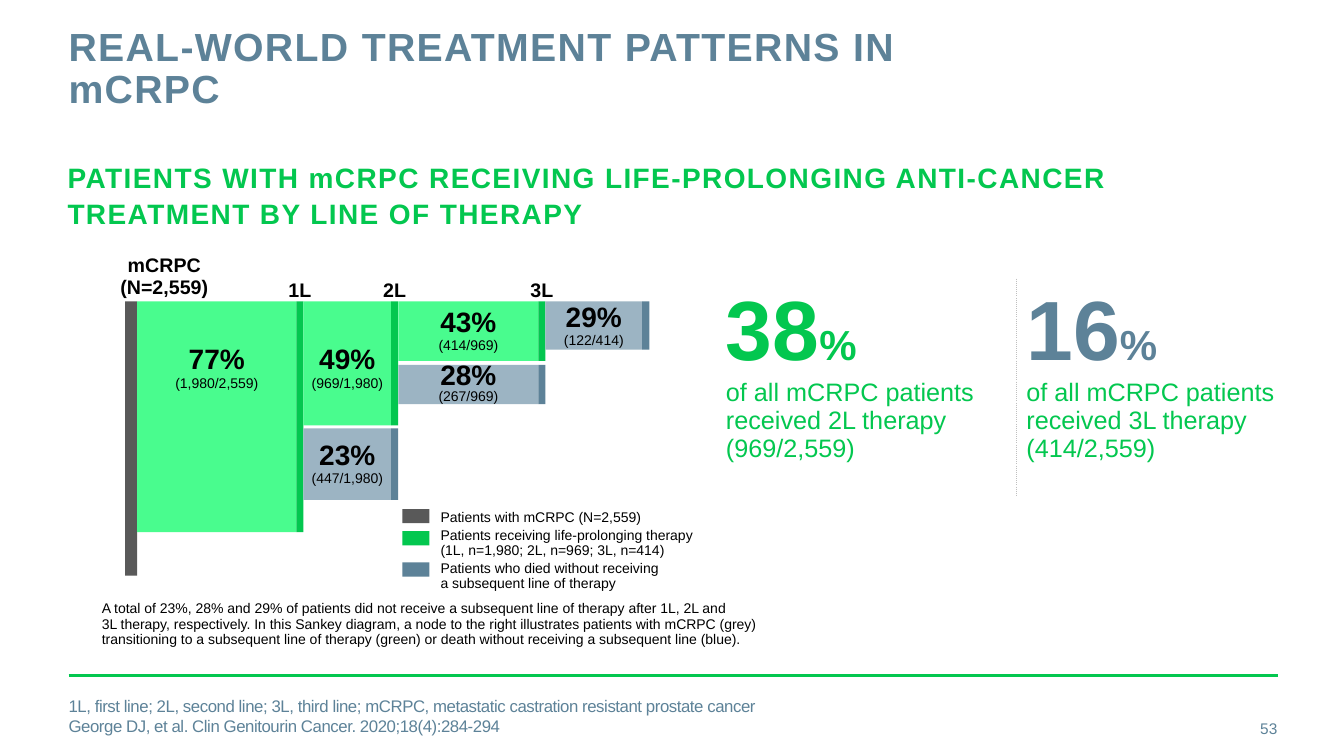
from copy import deepcopy

from lxml import etree
from pptx import Presentation
from pptx.dml.color import RGBColor
from pptx.enum.shapes import MSO_CONNECTOR, MSO_SHAPE
from pptx.enum.text import MSO_ANCHOR, PP_ALIGN
from pptx.oxml.ns import qn
from pptx.util import Inches, Pt

RECTANGLE = MSO_SHAPE.RECTANGLE
STRAIGHT = MSO_CONNECTOR.STRAIGHT
TOP, MIDDLE = MSO_ANCHOR.TOP, MSO_ANCHOR.MIDDLE
LEFT, CENTER, RIGHT = PP_ALIGN.LEFT, PP_ALIGN.CENTER, PP_ALIGN.RIGHT

BLACK = RGBColor(0x00, 0x00, 0x00)
GREY = RGBColor(0x59, 0x59, 0x59)
GREEN = RGBColor(0x03, 0xC7, 0x4F)
LIGHT_GREEN = RGBColor(0x49, 0xFC, 0x8E)
BLUE = RGBColor(0x5D, 0x82, 0x98)
LIGHT_BLUE = RGBColor(0x9C, 0xB4, 0xC3)
DIVIDER = RGBColor(0xBF, 0xBF, 0xBF)

FLOW_TOP = 2.99
NODE_WIDTH = 0.07
START_LEFT, START_WIDTH = 1.24, 0.12
NODES = {"1L": 2.94, "2L": 3.88, "3L": 5.34, "End": 6.37}


class Page:
    font = "Arial"

    def __init__(self, deck):
        self.slide = deck.slides.add_slide(deck.slide_layouts[6])
        self.shapes = self.slide.shapes

    def span(self, para, words, size, color=BLACK, bold=False, tracking=0):
        for index, line in enumerate(words.split("\n")):
            if index:
                para.add_line_break()
                para._p[-1].append(deepcopy(span._r.rPr))
            if not line:
                continue
            span = para.add_run()
            span.text = line
            span.font.name = self.font
            span.font.size = Pt(size)
            span.font.bold = bold
            span.font.color.rgb = color
            if tracking:
                span._r.get_or_add_rPr().set("spc", str(round(tracking * 100)))

    def fill_frame(self, frame, paragraphs, align=LEFT, spacing=None, after=None):
        for index, spans in enumerate(paragraphs):
            para = frame.add_paragraph() if index else frame.paragraphs[0]
            para.alignment = align
            if spacing:
                para.line_spacing = spacing
            if after:
                para.space_after = Pt(after)
            for span in spans:
                self.span(para, *span)

    def text(self, left, top, width, height, paragraphs, anchor=TOP, **style):
        box = self.shapes.add_textbox(
            Inches(left), Inches(top), Inches(width), Inches(height))
        frame = box.text_frame
        frame.word_wrap = True
        frame.vertical_anchor = anchor
        frame.margin_left = frame.margin_right = 0
        frame.margin_top = frame.margin_bottom = 0
        self.fill_frame(frame, paragraphs, **style)

    def bar(self, left, top, width, height, color):
        shape = self.shapes.add_shape(
            RECTANGLE, Inches(left), Inches(top), Inches(width), Inches(height))
        shape.shadow.inherit = False
        shape.fill.solid()
        shape.fill.fore_color.rgb = color
        shape.line.fill.background()

    def rule(self, left, top, right, color, weight):
        line = self.shapes.add_connector(
            STRAIGHT, Inches(left), Inches(top), Inches(right), Inches(top))
        line.line.color.rgb = color
        line.line.width = Pt(weight)
        etree.SubElement(line._element.spPr, qn("a:effectLst"))

    def flow(self, left, node, top, height, colors, share, count, label_top, spacing):
        light, dark = colors
        self.bar(left, top, node - left, height, light)
        self.bar(node, top, NODE_WIDTH, height, dark)
        self.text(left, label_top, node - left, 0.45,
                  [[(share + "\n", 20, BLACK, True), (count, 10)]],
                  align=CENTER, spacing=spacing)

    def border(self, cell, side):
        properties = cell._tc.get_or_add_tcPr()
        line = etree.Element(qn("a:" + side), w=str(Pt(1)))
        fill = etree.SubElement(line, qn("a:solidFill"))
        etree.SubElement(fill, qn("a:srgbClr"), val=str(DIVIDER))
        etree.SubElement(line, qn("a:prstDash"), val="sysDot")
        properties.insert(0, line)

    def figures(self, left, top, width, height, figures):
        table = self.shapes.add_table(
            1, len(figures), Inches(left), Inches(top), Inches(width), Inches(height)).table
        table.first_row = table.horz_banding = False
        for cell, (number, color, caption) in zip(table.rows[0].cells, figures):
            cell.fill.background()
            self.fill_frame(cell.text_frame, [
                [(number, 60, color, True), ("%", 30, color, True)],
                [(caption, 18, GREEN)],
            ])
        self.border(table.cell(0, 0), "lnR")
        self.border(table.cell(0, 1), "lnL")


def draw_sankey(page):
    treated, died = (LIGHT_GREEN, GREEN), (LIGHT_BLUE, BLUE)
    flows = [
        (None, "1L", FLOW_TOP, 2.29, treated, "77%", "(1,980/2,559)", 3.43, 0.9),
        ("1L", "2L", FLOW_TOP, 1.23, treated, "49%", "(969/1,980)", 3.43, 0.9),
        ("1L", "2L", 4.25, 0.71, died, "23%", "(447/1,980)", 4.38, 0.9),
        ("2L", "3L", FLOW_TOP, 0.59, treated, "43%", "(414/969)", 3.06, 0.9),
        ("2L", "3L", 3.62, 0.39, died, "28%", "(267/969)", 3.61, 0.8),
        ("3L", "End", FLOW_TOP, 0.48, died, "29%", "(122/414)", 3.01, 0.9),
    ]
    page.bar(START_LEFT, FLOW_TOP, START_WIDTH, 2.72, GREY)
    for source, target, *details in flows:
        left = NODES[source] + NODE_WIDTH if source else START_LEFT + START_WIDTH
        page.flow(left, NODES[target], *details)
    page.text(1.13, 2.54, 1, 0.42, [[("mCRPC\n(N=2,559)", 14, BLACK, True)]],
              align=CENTER, spacing=0.9)
    for name in ("1L", "2L", "3L"):
        page.text(NODES[name] + NODE_WIDTH / 2 - 0.2, 2.78, 0.4, 0.21,
                  [[(name, 14, BLACK, True)]], align=CENTER, spacing=0.9)


def draw_legend(page):
    entries = [
        (5.05, GREY, "Patients with mCRPC (N=2,559)"),
        (5.27, GREEN, "Patients receiving life-prolonging therapy\n"
                      "(1L, n=1,980; 2L, n=969; 3L, n=414)"),
        (5.58, BLUE, "Patients who died without receiving\na subsequent line of therapy"),
    ]
    for top, color, _ in entries:
        page.bar(3.99, top, 0.27, 0.14, color)
    page.text(4.37, 5.06, 2.7, 0.81, [[(words, 10)] for _, _, words in entries],
              spacing=0.9, after=2)


def main():
    deck = Presentation()
    deck.slide_width, deck.slide_height = Inches(13.33), Inches(7.5)
    page = Page(deck)
    page.rule(0.68, 6.7, 12.68, GREEN, 2)
    page.text(0.68, 0.27, 9.56, 0.88,
              [[("REAL-WORLD TREATMENT PATTERNS IN mCRPC", 28, BLUE, True, 1)]],
              spacing=Pt(30))
    page.text(0.67, 1.58, 12, 0.77,
              [[("PATIENTS WITH mCRPC RECEIVING LIFE-PROLONGING ANTI-CANCER "
                 "TREATMENT BY LINE OF THERAPY", 20, GREEN, True, 1)]], spacing=1.05)
    draw_sankey(page)
    draw_legend(page)
    page.text(1.01, 5.97, 6.8, 0.45, [[(
        "A total of 23%, 28% and 29% of patients did not receive a subsequent line of "
        "therapy after 1L, 2L and\n"
        "3L therapy, respectively. In this Sankey diagram, a node to the right illustrates "
        "patients with mCRPC (grey)\n"
        "transitioning to a subsequent line of therapy (green) or death without receiving "
        "a subsequent line (blue).", 10)]], spacing=0.9)
    page.figures(7.1, 2.77, 5.96, 2.14, [
        ("38", GREEN, "of all mCRPC patients received 2L therapy (969/2,559)"),
        ("16", BLUE, "of all mCRPC patients received 3L therapy (414/2,559)"),
    ])
    footnotes = [
        "1L, first line; 2L, second line; 3L, third line; mCRPC, metastatic castration "
        "resistant prostate cancer",
        "George DJ, et al. Clin Genitourin Cancer. 2020;18(4):284-294",
    ]
    page.text(0.68, 6.9, 8.88, 0.4,
              [[(words, 12, BLUE, False, -0.3)] for words in footnotes], anchor=MIDDLE)
    page.text(11.81, 7.03, 0.86, 0.4, [[("53", 11, BLUE)]], anchor=MIDDLE, align=RIGHT)
    deck.save("out.pptx")


if __name__ == "__main__":
    main()
